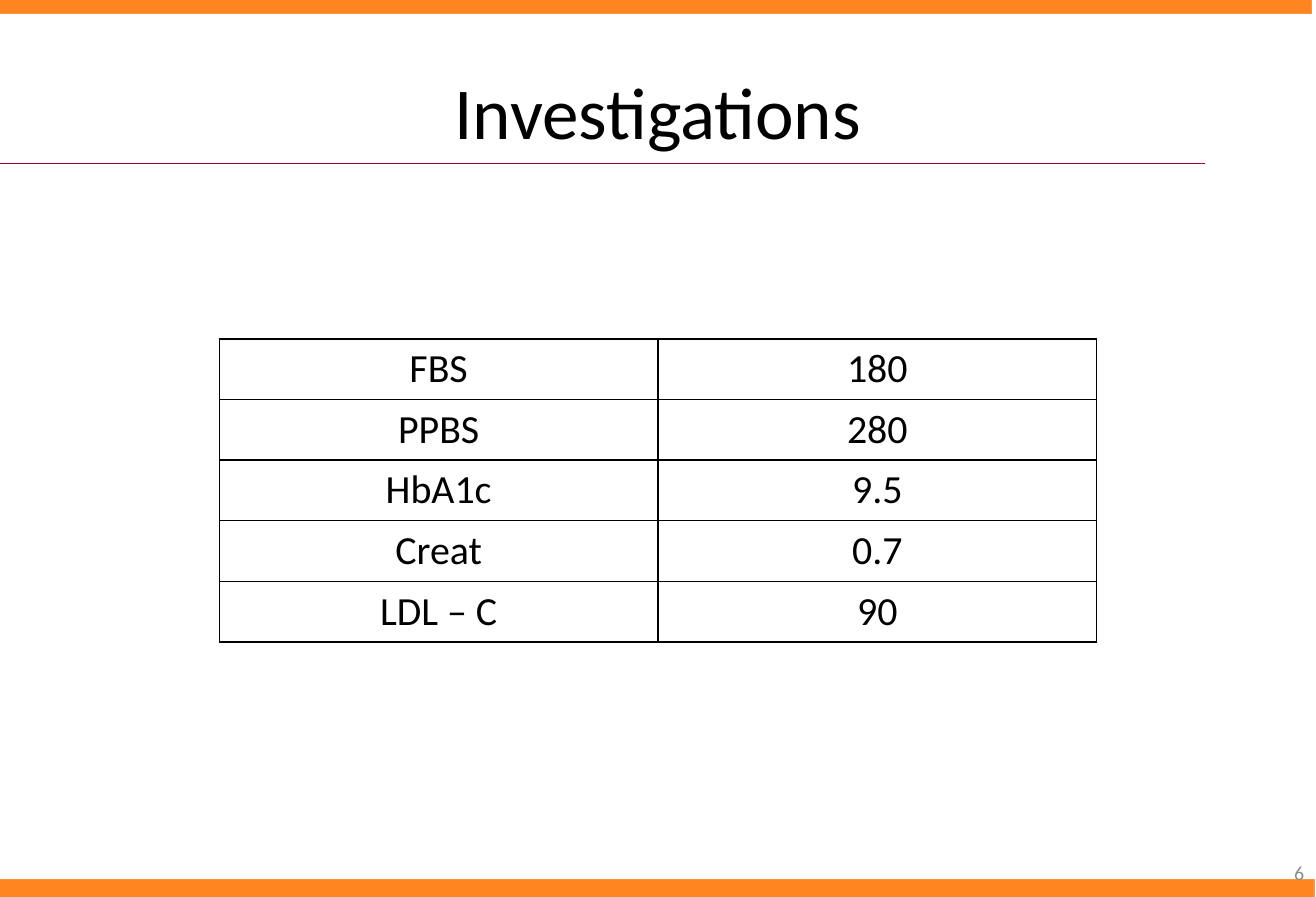
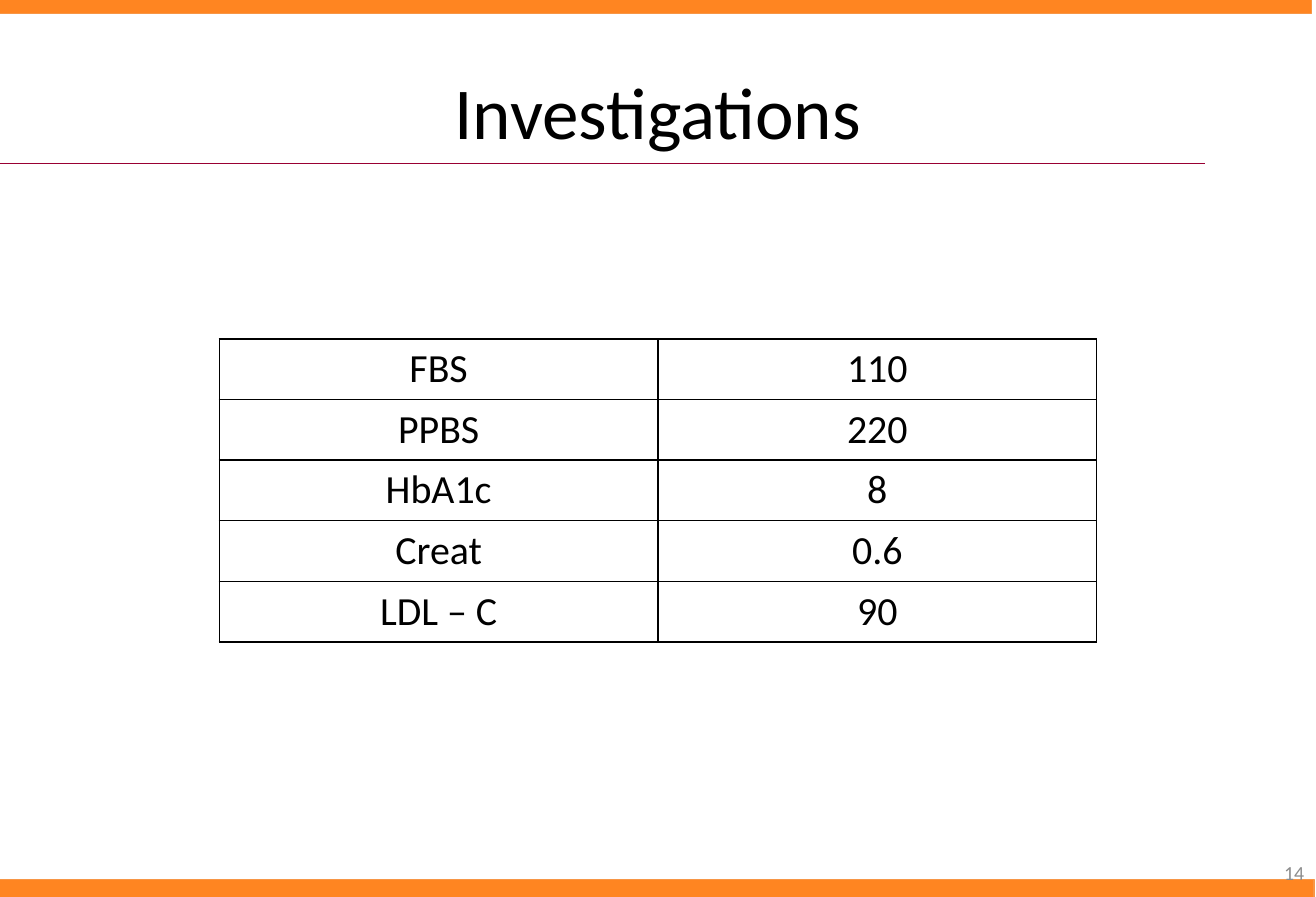
import pptx
import pptx.dml.color
import pptx.enum.shapes
import pptx.enum.text
import pptx.oxml
import pptx.oxml.ns
import pptx.util

Pt = pptx.util.Pt
RGBColor = pptx.dml.color.RGBColor
ALIGN = pptx.enum.text.PP_ALIGN
MIDDLE = pptx.enum.text.MSO_ANCHOR.MIDDLE

ORANGE = RGBColor(0xFF, 0x85, 0x21)
BAND_EDGE = RGBColor(0xF7, 0x96, 0x46)
CRIMSON = RGBColor(0x99, 0x00, 0x33)
BLACK = RGBColor(0x00, 0x00, 0x00)
GRAY = RGBColor(0x8C, 0x8C, 0x8C)
FONT = "Calibri"
TITLE_ONLY = 5

TESTS = ["FBS", "PPBS", "HbA1c", "Creat", "LDL – C"]
VISITS = [
    ("6", ["180", "280", "9.5", "0.7", "90"]),
    ("14", ["110", "220", "8", "0.6", "90"]),
]


def set_text(text_frame, text, size, color, alignment):
    text_frame.text = text
    paragraph = text_frame.paragraphs[0]
    paragraph.alignment = alignment
    font = paragraph.runs[0].font
    font.name, font.size = FONT, Pt(size)
    font.color.rgb = color


def add_band(slide, left, top, width):
    """Add an orange bar; the minus sign's own margins make it slim."""
    minus = pptx.enum.shapes.MSO_SHAPE.MATH_MINUS
    band = slide.shapes.add_shape(minus, Pt(left), Pt(top), Pt(width), Pt(51.84))
    band.shadow.inherit = False
    band.fill.solid()
    band.fill.fore_color.rgb = ORANGE
    band.line.color.rgb = BAND_EDGE
    band.line.width = Pt(0.75)


def add_title_rule(slide):
    straight = pptx.enum.shapes.MSO_CONNECTOR.STRAIGHT
    rule = slide.shapes.add_connector(straight, Pt(-3.6), Pt(98.5), Pt(725), Pt(98.5))
    rule.line.color.rgb = CRIMSON
    rule.line.width = Pt(0.25)
    properties = rule._element.spPr
    properties.append(pptx.oxml.parse_xml(
        f'<a:effectLst {pptx.oxml.ns.nsdecls("a")}/>'))


def add_title(slide, text):
    title = slide.shapes.title
    title.left, title.top = Pt(39.6), Pt(21.6)
    title.width, title.height = Pt(712.8), Pt(90)
    title.text_frame.vertical_anchor = MIDDLE
    set_text(title.text_frame, text, 44, BLACK, ALIGN.CENTER)


def add_page_number(slide, number):
    box = slide.shapes.add_textbox(Pt(607), Pt(511.2), Pt(185), Pt(28.8))
    box.text_frame.word_wrap = True
    box.text_frame.vertical_anchor = MIDDLE
    set_text(box.text_frame, number, 12, GRAY, ALIGN.RIGHT)


def add_cell_borders(cell):
    properties = cell._tc.get_or_add_tcPr()
    for position, side in enumerate(("lnL", "lnR", "lnT", "lnB")):
        properties.insert(position, pptx.oxml.parse_xml(
            f'<a:{side} {pptx.oxml.ns.nsdecls("a")} w="{Pt(1)}">'
            f'<a:solidFill><a:srgbClr val="{BLACK}"/></a:solidFill></a:{side}>'))


def add_results_table(slide, rows):
    row_height = 36.5
    frame = slide.shapes.add_table(
        len(rows), 2, Pt(132), Pt(204), Pt(528), Pt(row_height * len(rows)))
    table = frame.table
    table.first_row = table.horz_banding = False
    for row_index, row in enumerate(rows):
        table.rows[row_index].height = Pt(row_height)
        for column_index, text in enumerate(row):
            cell = table.cell(row_index, column_index)
            cell.fill.background()
            set_text(cell.text_frame, text, 24, BLACK, ALIGN.CENTER)
            add_cell_borders(cell)


def add_investigations_slide(presentation, number, values):
    slide = presentation.slides.add_slide(presentation.slide_layouts[TITLE_ONLY])
    add_band(slide, -142.56, -23.76, 1074.24)
    add_band(slide, -149.76, 509.76, 1084.32)
    add_title_rule(slide)
    add_title(slide, "Investigations")
    add_page_number(slide, number)
    add_results_table(slide, list(zip(TESTS, values)))


def main():
    presentation = pptx.Presentation()
    presentation.slide_width, presentation.slide_height = Pt(792), Pt(540)
    for number, values in VISITS:
        add_investigations_slide(presentation, number, values)
    presentation.save("out.pptx")


if __name__ == "__main__":
    main()
